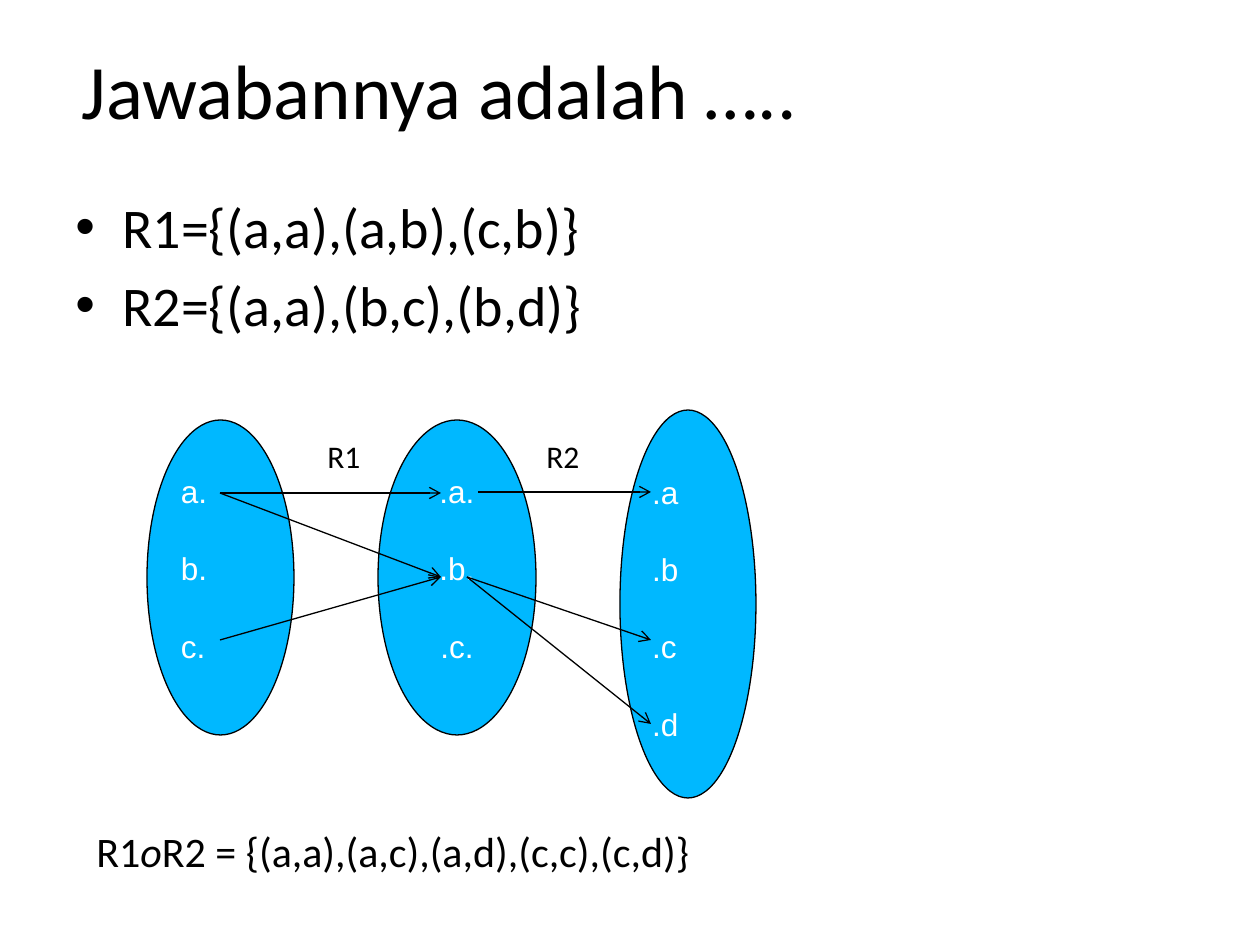
import pptx
import pptx.dml.color
import pptx.enum.shapes
import pptx.enum.text
import pptx.oxml.ns
import pptx.util
import lxml.etree

PX = 914400 // 126
ALIGN = pptx.enum.text.PP_ALIGN
ANCHOR = pptx.enum.text.MSO_ANCHOR

TITLE = "Jawabannya adalah ….."
RELATIONS = ["R1={(a,a),(a,b),(c,b)}", "R2={(a,a),(b,c),(b,d)}"]
COMPOSITION = [("R1", False), ("о", True), ("R2 = {(a,a),(a,c),(a,d),(c,c),(c,d)}", False)]
SETS = [
    ((147, 420, 147, 315), ["a.", "b.", "c."], ALIGN.LEFT),
    ((378, 420, 158, 315), [".a.", ".b.", ".c."], ALIGN.CENTER),
    ((620, 410, 136, 388), [".a", ".b", ".c", ".d"], ALIGN.LEFT),
]
ARROWS = [
    ((220, 493), (441, 493)),
    ((220, 493), (441, 577)),
    ((220, 640), (441, 577)),
    ((478, 492), (651, 492)),
    ((467, 577), (651, 640)),
    ((467, 577), (651, 724)),
]
LABELS = [("R1", (315, 431, 66, 50)), ("R2", (534, 431, 66, 50))]


def scale(values):
    return [value * PX for value in values]


def color(value):
    return pptx.dml.color.RGBColor.from_string(value)


def add_child(parent, tag, **attributes):
    child = lxml.etree.SubElement(parent, pptx.oxml.ns.qn(tag))
    for name, value in attributes.items():
        child.set(name, str(value))


def write(shape, paragraphs, size, font="Calibri", fill="000000", align=ALIGN.LEFT,
          anchor=ANCHOR.TOP, gap=0, bullet=False, wrap=True):
    frame = shape.text_frame
    frame.word_wrap = wrap
    frame.vertical_anchor = anchor
    for index, content in enumerate(paragraphs):
        paragraph = frame.add_paragraph() if index else frame.paragraphs[0]
        paragraph.alignment = align
        if index and gap:
            paragraph.space_before = pptx.util.Pt(gap)
        if bullet:
            properties = paragraph._p.get_or_add_pPr()
            properties.set("marL", str(47 * PX))
            properties.set("indent", str(-47 * PX))
            add_child(properties, "a:buFont", typeface="Arial")
            add_child(properties, "a:buChar", char="•")
        runs = [(content, False)] if isinstance(content, str) else content
        for text, italic in runs:
            run = paragraph.add_run()
            run.text = text
            run.font.size = pptx.util.Pt(size)
            run.font.name = font
            run.font.italic = italic
            run.font.color.rgb = color(fill)


def add_text(shapes, box, paragraphs, size, **style):
    write(shapes.add_textbox(*scale(box)), paragraphs, size, **style)


def outline(shape):
    shape.line.color.rgb = color("000000")
    shape.line.width = pptx.util.Pt(0.75)


def add_set(shapes, box, elements, align):
    oval = shapes.add_shape(pptx.enum.shapes.MSO_SHAPE.OVAL, *scale(box))
    oval.shadow.inherit = False
    oval.fill.solid()
    oval.fill.fore_color.rgb = color("00B8FF")
    outline(oval)
    write(oval, elements, 18, font="Arial", fill="FFFFFF", align=align, gap=22.5)


def add_arrow(shapes, start, end):
    arrow = shapes.add_connector(pptx.enum.shapes.MSO_CONNECTOR.STRAIGHT, *scale(start + end))
    outline(arrow)
    add_child(arrow.line._get_or_add_ln(), "a:tailEnd", type="arrow")
    add_child(arrow._element.spPr, "a:effectLst")


def main():
    presentation = pptx.Presentation()
    presentation.slide_width = pptx.util.Inches(10)
    presentation.slide_height = pptx.util.Inches(7.5)
    slide = presentation.slides.add_slide(presentation.slide_layouts[5])

    title = slide.shapes.title
    title.left, title.top, title.width, title.height = scale((69, 10, 1134, 158))
    write(title, [TITLE], 44, anchor=ANCHOR.MIDDLE)

    add_text(slide.shapes, (63, 186, 1134, 658), RELATIONS, 32, gap=6.4, bullet=True)
    add_text(slide.shapes, (84, 819, 708, 63), [COMPOSITION], 24, wrap=False)

    diagram = slide.shapes.add_group_shape().shapes
    for box, elements, align in SETS:
        add_set(diagram, box, elements, align)
    for start, end in ARROWS:
        add_arrow(diagram, start, end)
    for text, box in LABELS:
        add_text(diagram, box, [text], 18, wrap=False)

    presentation.save("out.pptx")


if __name__ == "__main__":
    main()
